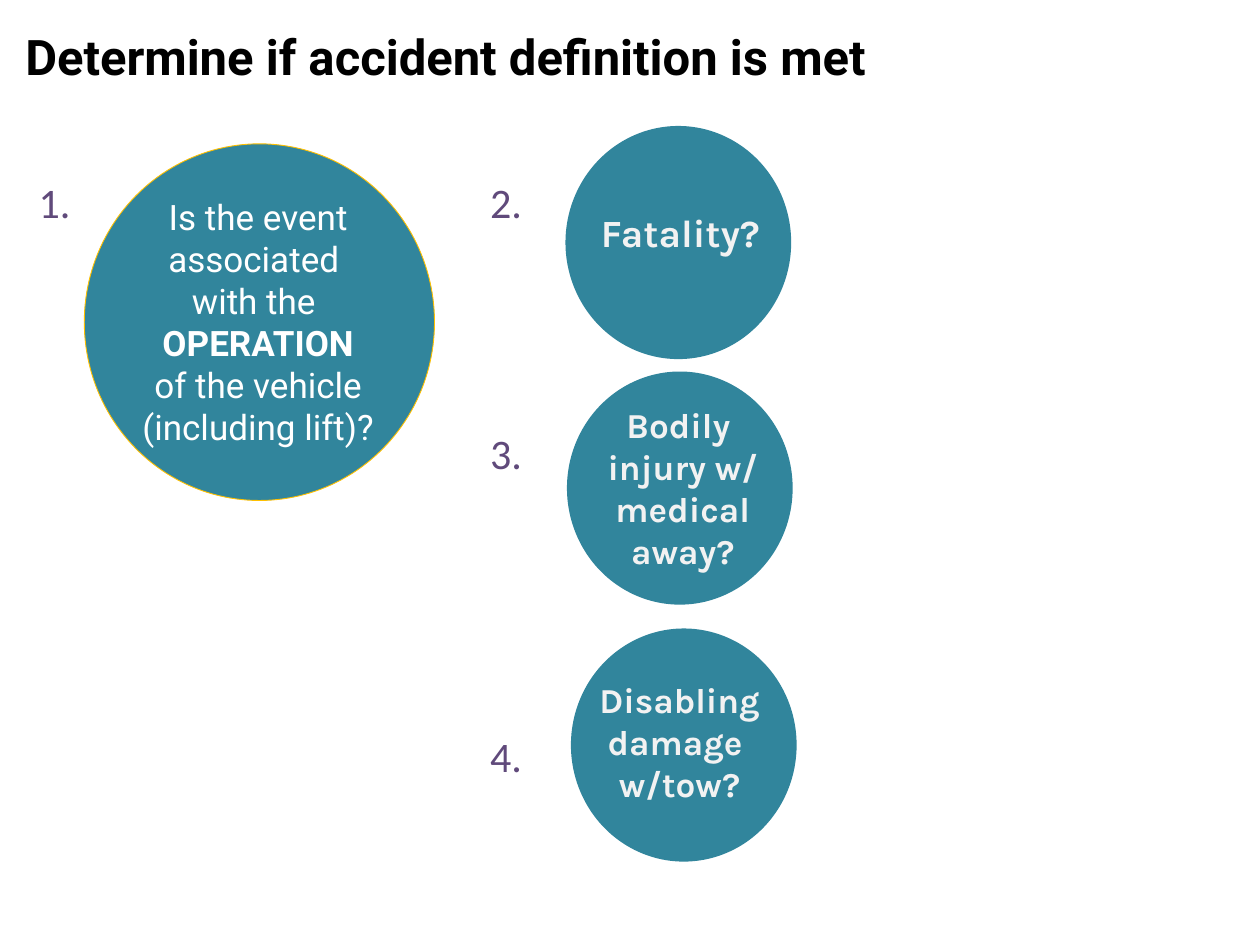
from pptx import Presentation
from pptx.dml.color import RGBColor
from pptx.enum.shapes import MSO_SHAPE as Shape
from pptx.enum.text import MSO_ANCHOR as Anchor, MSO_AUTO_SIZE as AutoSize, PP_ALIGN as Align
from pptx.util import Cm, Pt

# Content: lengths in cm as (left, top, width, height)
HEADING = "Determine if accident definition is met"
HEADING_BOX = (0.51, 0.66, 24.41, 1.17)

# Circle box, outlined, text box, style, anchor, lines; bold lines are in EMPHASIS
QUESTIONS = [
    ((11.51, 12.67, 4.55, 4.7), False, (12.01, 13.67, 3.38, 2.57), "criterion", Anchor.TOP,
     ["Disabling ", "damage ", "w/tow?"]),
    ((11.43, 7.49, 4.55, 4.7), False, (12.04, 8.13, 3.45, 3.43), "criterion", Anchor.TOP,
     ["Bodily ", "injury w/", "medical away?"]),
    ((1.7, 2.9, 7.06, 7.19), True, (2.69, 3.91, 5.03, 5.13), "operation", Anchor.MIDDLE,
     ["Is the event", "associated ", "with the ", "OPERATION",
      " of the vehicle ", "(including lift)?"]),
    ((11.4, 2.54, 4.55, 4.7), False, (11.99, 4.22, 3.45, 0.94), "fatality", Anchor.TOP,
     ["Fatality?"]),
]
EMPHASIS = {"OPERATION"}

# Number box, then (number, space before in points)
NUMBERS = [
    ((9.63, 3.43, 1.45, 12.57), [("2.", 0), ("3.", 115), ("4.", 144)]),
    ((0.53, 3.43, 1.17, 1.27), [("1.", 0)]),
]

# Theme: text styles are (font, size, colour, bold)
THEME = {
    "circle": "31859C",
    "outline": "FFC000",
    "heading": ("Roboto", 28, "000000", True),
    "operation": ("Roboto", 20, "FFFFFF", False),
    "criterion": ("Karla", 20, "F2F2F2", True),
    "fatality": ("Karla", 22, "F2F2F2", True),
    "number": ("Calibri", 24, "604A7B", False),
}


def colour(name):
    return RGBColor.from_string(THEME[name])


def lengths(box):
    return [Cm(value) for value in box]


def add_run(paragraph, text, style):
    name, size, rgb, bold = THEME[style]
    run = paragraph.add_run()
    run.text = text
    run.font.name, run.font.size = name, Pt(size)
    run.font.color.rgb = RGBColor.from_string(rgb)
    run.font.bold = bold or text in EMPHASIS


def clear_margins(frame):
    frame.margin_left = frame.margin_right = frame.margin_top = frame.margin_bottom = 0


def add_lines(slide, box, lines, style, align):
    """Add a text box with one paragraph per (text, space before)."""
    frame = slide.shapes.add_textbox(*lengths(box)).text_frame
    frame.word_wrap = True
    frame.auto_size = AutoSize.SHAPE_TO_FIT_TEXT
    for index, (text, gap) in enumerate(lines):
        paragraph = frame.add_paragraph() if index else frame.paragraphs[0]
        paragraph.alignment = align
        if gap:
            paragraph.space_before = Pt(gap)
        add_run(paragraph, text, style)
    return frame


def add_circle(slide, box, outlined):
    circle = slide.shapes.add_shape(Shape.OVAL, *lengths(box))
    circle.shadow.inherit = False
    circle.fill.solid()
    circle.fill.fore_color.rgb = colour("circle")
    if outlined:
        circle.line.color.rgb = colour("outline")
        circle.line.width = Pt(0.5)
    else:
        circle.line.fill.background()


def add_heading(slide):
    heading = slide.shapes.title
    heading.left, heading.top, heading.width, heading.height = lengths(HEADING_BOX)
    frame = heading.text_frame
    clear_margins(frame)
    frame.word_wrap = True
    frame.auto_size = AutoSize.NONE
    frame.vertical_anchor = Anchor.TOP
    paragraph = frame.paragraphs[0]
    paragraph.alignment = Align.LEFT
    paragraph.line_spacing = 0.9
    add_run(paragraph, HEADING, "heading")


def main():
    deck = Presentation()
    deck.slide_width, deck.slide_height = Cm(25.4), Cm(19.05)
    slide = deck.slides.add_slide(deck.slide_layouts[5])
    add_heading(slide)

    # Circles with their questions
    for circle_box, outlined, text_box, style, anchor, lines in QUESTIONS:
        add_circle(slide, circle_box, outlined)
        frame = add_lines(slide, text_box, [(line, 0) for line in lines], style, Align.CENTER)
        clear_margins(frame)
        frame.vertical_anchor = anchor

    # Step numbers
    for box, steps in NUMBERS:
        add_lines(slide, box, steps, "number", Align.LEFT)

    deck.save("out.pptx")


if __name__ == "__main__":
    main()
